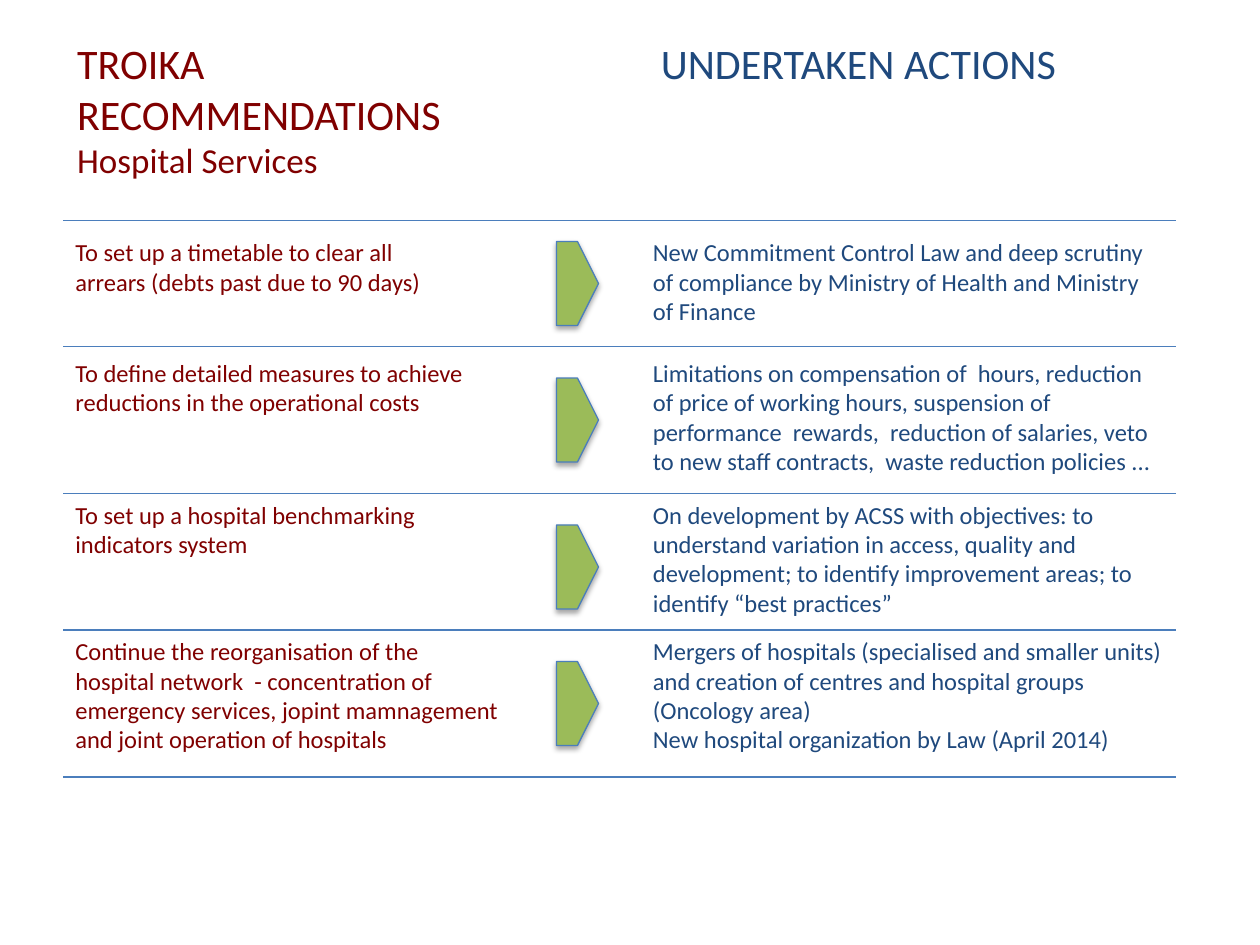
import pptx
import pptx.util
import pptx.dml.color
import pptx.enum.shapes
import pptx.enum.text
from lxml import etree

Pt = pptx.util.Pt
ALIGN = pptx.enum.text.PP_ALIGN

MAROON, NAVY, RULE, GREEN = "800000", "1F497D", "4B7EBC", "9BBB59"
LEFT, RIGHT = 36, 672
ARROW_LEFT, ACTION_LEFT = 318, 366
RULE_TOPS = [126, 198, 282, 360, 444]

# text top, arrow top, recommendation width, recommendation, actions
ROWS = [
    (132, 138, 216,
     "To set up a timetable to clear all arrears (debts past due to 90 days)",
     ["New Commitment Control Law and deep scrutiny of compliance by Ministry "
      "of Health and Ministry of Finance"]),
    (201, 216, 258,
     "To define detailed measures to achieve reductions in the operational costs",
     ["Limitations on compensation of  hours, reduction of price of working "
      "hours, suspension of  performance  rewards,  reduction of salaries, veto "
      "to new staff contracts,  waste reduction policies ..."]),
    (282, 300, 258,
     "To set up a hospital benchmarking indicators system",
     ["On development by ACSS with objectives: to understand variation in "
      "access, quality and development; to identify improvement areas; to "
      "identify “best practices”"]),
    (360, 378, 258,
     "Continue the reorganisation of the hospital network  - concentration of "
     "emergency services, jopint mamnagement and joint operation of hospitals",
     ["Mergers of hospitals (specialised and smaller units) and creation of "
      "centres and hospital groups (Oncology area)",
      "New hospital organization by Law (April 2014)"]),
]


def rgb(hex_color):
    return pptx.dml.color.RGBColor.from_string(hex_color)


def add_effects(shape):
    return etree.SubElement(shape._element.spPr, pptx.oxml.ns.qn("a:effectLst"))


def add_text(slide, lines, left, top, width, height, color,
             sizes=(14,), align=ALIGN.LEFT):
    """Write one paragraph per line; the last size serves all further lines."""
    box = slide.shapes.add_textbox(Pt(left), Pt(top), Pt(width), Pt(height))
    frame = box.text_frame
    frame.word_wrap = True
    for index, line in enumerate(lines):
        paragraph = frame.paragraphs[0] if index == 0 else frame.add_paragraph()
        paragraph.alignment = align
        run = paragraph.add_run()
        run.text = line
        run.font.name = "Calibri"
        run.font.size = Pt(sizes[min(index, len(sizes) - 1)])
        run.font.color.rgb = rgb(color)


def add_rule(slide, top):
    rule = slide.shapes.add_connector(
        pptx.enum.shapes.MSO_CONNECTOR.STRAIGHT,
        Pt(LEFT), Pt(top), Pt(RIGHT), Pt(top))
    rule.line.color.rgb = rgb(RULE)
    rule.line.width = Pt(0.75)
    add_effects(rule)


def add_arrow(slide, top):
    arrow = slide.shapes.add_shape(
        pptx.enum.shapes.MSO_SHAPE.PENTAGON,
        Pt(ARROW_LEFT), Pt(top), Pt(24), Pt(48))
    arrow.fill.solid()
    arrow.fill.fore_color.rgb = rgb(GREEN)
    arrow.line.color.rgb = rgb(RULE)
    arrow.line.width = Pt(0.75)
    # Soft shadow straight below
    qn = pptx.oxml.ns.qn
    shadow = etree.SubElement(
        add_effects(arrow), qn("a:outerShdw"), blurRad=str(Pt(3.1)),
        dist=str(Pt(1.8)), dir="5400000", rotWithShape="0")
    tint = etree.SubElement(shadow, qn("a:srgbClr"), val="000000")
    etree.SubElement(tint, qn("a:alpha"), val="35000")


def main():
    deck = pptx.Presentation()
    deck.slide_width, deck.slide_height = Pt(720), Pt(540)
    slide = deck.slides.add_slide(deck.slide_layouts[6])

    # Column headings
    add_text(slide, ["TROIKA RECOMMENDATIONS", "Hospital Services"],
             37, 18, 290, 68, MAROON, sizes=(24, 20))
    add_text(slide, ["UNDERTAKEN ACTIONS "], 348.5, 18, 289.5, 103, NAVY,
             sizes=(24,), align=ALIGN.CENTER)

    # Row dividers
    for top in RULE_TOPS:
        add_rule(slide, top)

    # Recommendation, arrow and actions of each row
    for text_top, arrow_top, width, recommendation, actions in ROWS:
        add_text(slide, [recommendation], LEFT, text_top, width, 58, MAROON)
        add_text(slide, actions, ACTION_LEFT, text_top, RIGHT - ACTION_LEFT, 75, NAVY)
        add_arrow(slide, arrow_top)

    deck.save("out.pptx")


if __name__ == "__main__":
    main()
